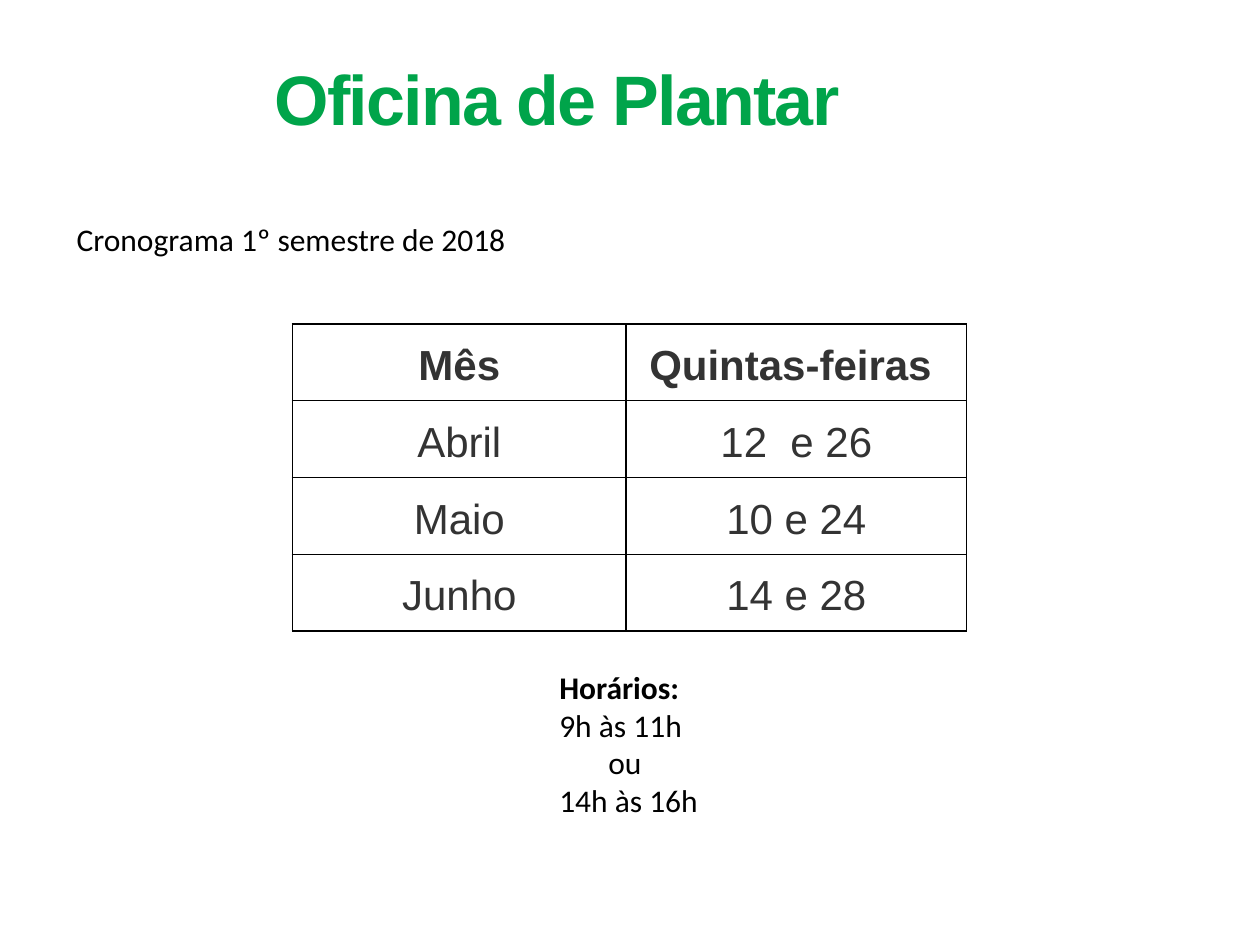
import pptx
import pptx.util
import pptx.dml.color
import pptx.enum.text
import pptx.oxml

GREEN = pptx.dml.color.RGBColor(0x00, 0xA4, 0x4A)
GREY = pptx.dml.color.RGBColor(0x33, 0x33, 0x33)
BLACK = pptx.dml.color.RGBColor(0x00, 0x00, 0x00)
LEFT = pptx.enum.text.PP_ALIGN.LEFT
CENTER = pptx.enum.text.PP_ALIGN.CENTER
NS = 'xmlns:a="http://schemas.openxmlformats.org/drawingml/2006/main"'

deck = pptx.Presentation()
deck.slide_width = pptx.util.Inches(10)
deck.slide_height = pptx.util.Inches(7.5)
slide = deck.slides.add_slide(deck.slide_layouts[6])
INCH = deck.slide_width // 10


def write(paragraph, text, size, font, color, bold=False, align=LEFT):
    paragraph.alignment = align
    run = paragraph.add_run()
    run.text = text
    run.font.size = pptx.util.Pt(size)
    run.font.name = font
    run.font.bold = bold
    run.font.color.rgb = color
    return run


def text_frame(left, top, width, height):
    box = slide.shapes.add_textbox(*(int(n * INCH) for n in (left, top, width, height)))
    box.text_frame.word_wrap = False
    box.text_frame.auto_size = pptx.enum.text.MSO_AUTO_SIZE.SHAPE_TO_FIT_TEXT
    return box.text_frame


# Schedule table
schedule = [
    ("Mês", "Quintas-feiras "),
    ("Abril", "12  e 26"),
    ("Maio", "10 e 24"),
    ("Junho", "14 e 28"),
]
column_widths = (2.65, 2.7)
row_height = 0.61
calendar = slide.shapes.add_table(
    len(schedule), len(column_widths), int(2.32 * INCH), int(2.57 * INCH),
    int(sum(column_widths) * INCH), int(row_height * len(schedule) * INCH)).table
for column, width in zip(calendar.columns, column_widths):
    column.width = int(width * INCH)

for r, entries in enumerate(schedule):
    calendar.rows[r].height = int(row_height * INCH)
    for c, entry in enumerate(entries):
        cell = calendar.cell(r, c)
        cell.vertical_anchor = pptx.enum.text.MSO_ANCHOR.MIDDLE
        cell.margin_left = cell.margin_right = int(0.07 * INCH)
        cell.margin_top = cell.margin_bottom = 0
        line = cell.text_frame.paragraphs[0]
        line.line_spacing = 1.15
        write(line, entry, 24, "Arial", GREY, r == 0, CENTER)
        # Borders come before the fill in the cell properties
        for side in ("lnL", "lnR", "lnT", "lnB"):
            cell._tc.get_or_add_tcPr().append(pptx.oxml.parse_xml(
                f'<a:{side} {NS} w="12700"><a:solidFill><a:srgbClr val="{BLACK}"/>'
                f'</a:solidFill></a:{side}>'))
        cell.fill.background()

# Title
title = text_frame(2.06, 0.39, 4.72, 0.77)
title_run = write(title.paragraphs[0], "Oficina de Plantar", 40, "Arial", GREEN, True, CENTER)
title_run.font._element.set("spc", "-100")

# Class times
times = text_frame(4.34, 5.25, 1.32, 1.31)
for i, (text, bold, align) in enumerate([
        ("Horários:", True, LEFT),
        ("9h às 11h", False, LEFT),
        ("ou ", False, CENTER),
        ("14h às 16h", False, LEFT)]):
    line = times.add_paragraph() if i else times.paragraphs[0]
    write(line, text, 18, "Calibri", BLACK, bold, align)

# Semester heading
semester = text_frame(0.51, 1.7, 3.65, 0.4)
write(semester.paragraphs[0], "Cronograma 1º semestre de 2018", 18, "Calibri", BLACK)

deck.save("out.pptx")
